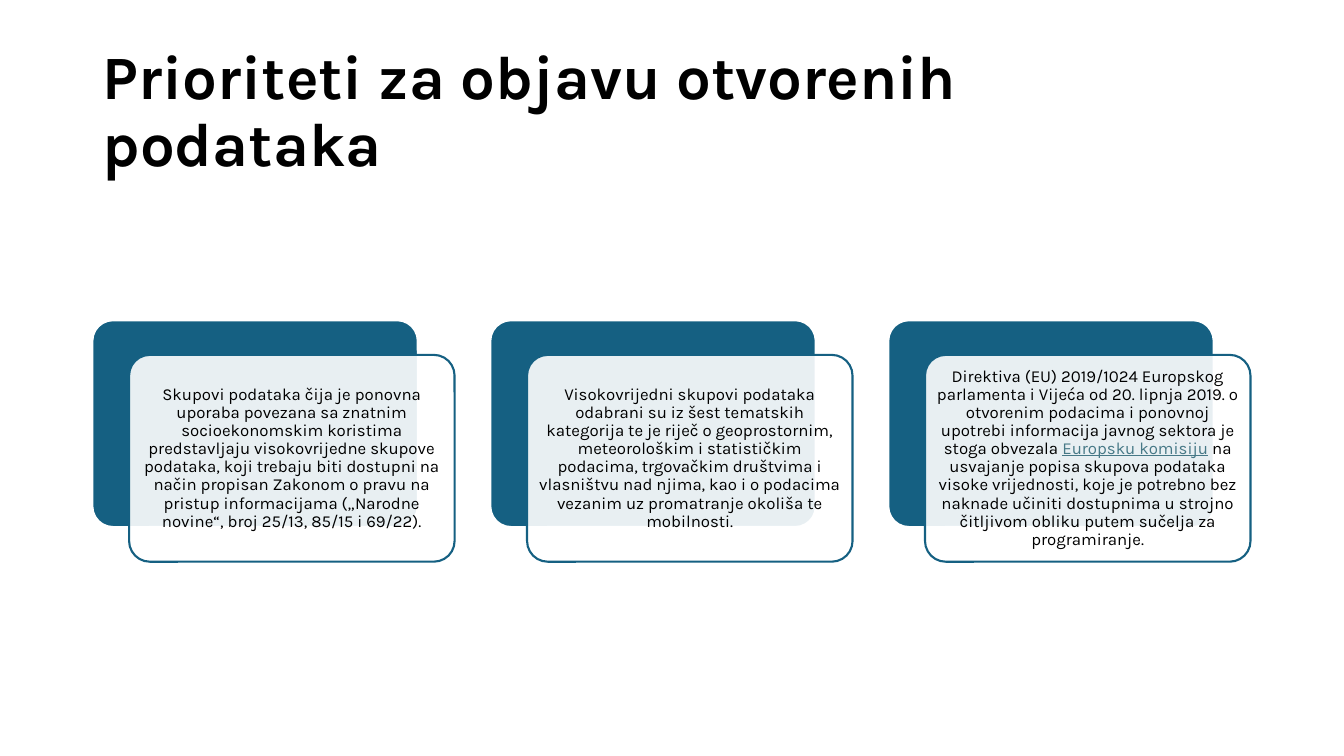
from lxml import etree
from pptx import Presentation
from pptx.dml.color import RGBColor
from pptx.enum.shapes import MSO_SHAPE
from pptx.enum.text import MSO_ANCHOR, MSO_AUTO_SIZE, PP_ALIGN
from pptx.oxml.ns import qn
from pptx.util import Pt

ROUNDED = MSO_SHAPE.ROUNDED_RECTANGLE
MIDDLE = MSO_ANCHOR.MIDDLE
LEFT, CENTER = PP_ALIGN.LEFT, PP_ALIGN.CENTER
NO_FIT = MSO_AUTO_SIZE.NONE

PX = 9525  # EMU per px, slide of 1280 x 720 px
FONT = "Karla"
BLACK, WHITE, TEAL, LINK = "000000", "FFFFFF", "156082", "467886"

CARD_LEFT, CARD_TOP, CARD_PITCH = 88, 305, 379
CARD_WIDTH, CARD_HEIGHT = 310, 197
FRONT_DX, FRONT_DY = 35, 33
INSET = 5

# Each card is a list of (text, is_link) pieces
PRIORITIES = [
    [("Skupovi podataka čija je ponovna uporaba povezana sa znatnim "
      "socioekonomskim koristima predstavljaju visokovrijedne skupove podataka, "
      "koji trebaju biti dostupni na način propisan Zakonom o pravu na pristup "
      "informacijama („Narodne novine“, broj 25/13, 85/15 i 69/22).", False)],
    [("Visokovrijedni skupovi podataka odabrani su iz šest tematskih kategorija "
      "te je riječ o geoprostornim, meteorološkim i statističkim podacima, "
      "trgovačkim društvima i vlasništvu nad njima, kao i o podacima vezanim uz "
      "promatranje okoliša te mobilnosti.", False)],
    [("Direktiva (EU) 2019/1024 Europskog parlamenta i Vijeća od 20. lipnja 2019. "
      "o otvorenim podacima i ponovnoj upotrebi informacija javnog sektora je "
      "stoga obvezala ", False),
     ("Europsku komisiju", True),
     (" na usvajanje popisa skupova podataka visoke vrijednosti, koje je potrebno "
      "bez naknade učiniti dostupnima u strojno čitljivom obliku putem sučelja za "
      "programiranje.", False)],
]


def style_run(run, size, color, bold=False):
    run.font.name = FONT
    run.font.size = Pt(size)
    run.font.bold = bold
    run.font.color.rgb = RGBColor.from_string(color)


def add_card(left, top, fill, line):
    card = slide.shapes.add_shape(
        ROUNDED, left * PX, top * PX, CARD_WIDTH * PX, CARD_HEIGHT * PX)
    card.adjustments[0] = 0.1
    card.shadow.inherit = False
    card.fill.solid()
    card.fill.fore_color.rgb = RGBColor.from_string(fill)
    card.line.color.rgb = RGBColor.from_string(line)
    card.line.width = Pt(1.5)
    return card


prs = Presentation()
prs.slide_width, prs.slide_height = 1280 * PX, 720 * PX
slide = prs.slides.add_slide(prs.slide_layouts[5])

# Title
title = slide.shapes.title
title.left, title.top, title.width, title.height = 88 * PX, 38 * PX, 1104 * PX, 139 * PX
heading = title.text_frame
heading.text = "Prioriteti za objavu otvorenih podataka"
heading.word_wrap = True
heading.auto_size = NO_FIT
heading.vertical_anchor = MIDDLE
heading.paragraphs[0].alignment = LEFT
heading.paragraphs[0].line_spacing = 0.9
style_run(heading.paragraphs[0].runs[0], 44, BLACK, bold=True)

# Three priorities: a solid card behind a translucent one with the text
for index, pieces in enumerate(PRIORITIES):
    left = CARD_LEFT + index * CARD_PITCH
    add_card(left, CARD_TOP, TEAL, WHITE)
    front = add_card(left + FRONT_DX, CARD_TOP + FRONT_DY, WHITE, TEAL)
    front_color = front.fill._xPr.find(qn("a:solidFill"))[0]
    etree.SubElement(front_color, qn("a:alpha"), val="90000")

    body = front.text_frame
    body.word_wrap = True
    body.vertical_anchor = MIDDLE
    body.margin_left = body.margin_right = INSET * PX
    body.margin_top = body.margin_bottom = INSET * PX
    priority = body.paragraphs[0]
    priority.alignment = CENTER
    priority.line_spacing = 0.9
    priority.space_after = Pt(4)
    for text, is_link in pieces:
        run = priority.add_run()
        run.text = text
        style_run(run, 12, LINK if is_link else BLACK)
        run.font.underline = is_link

prs.save("out.pptx")
